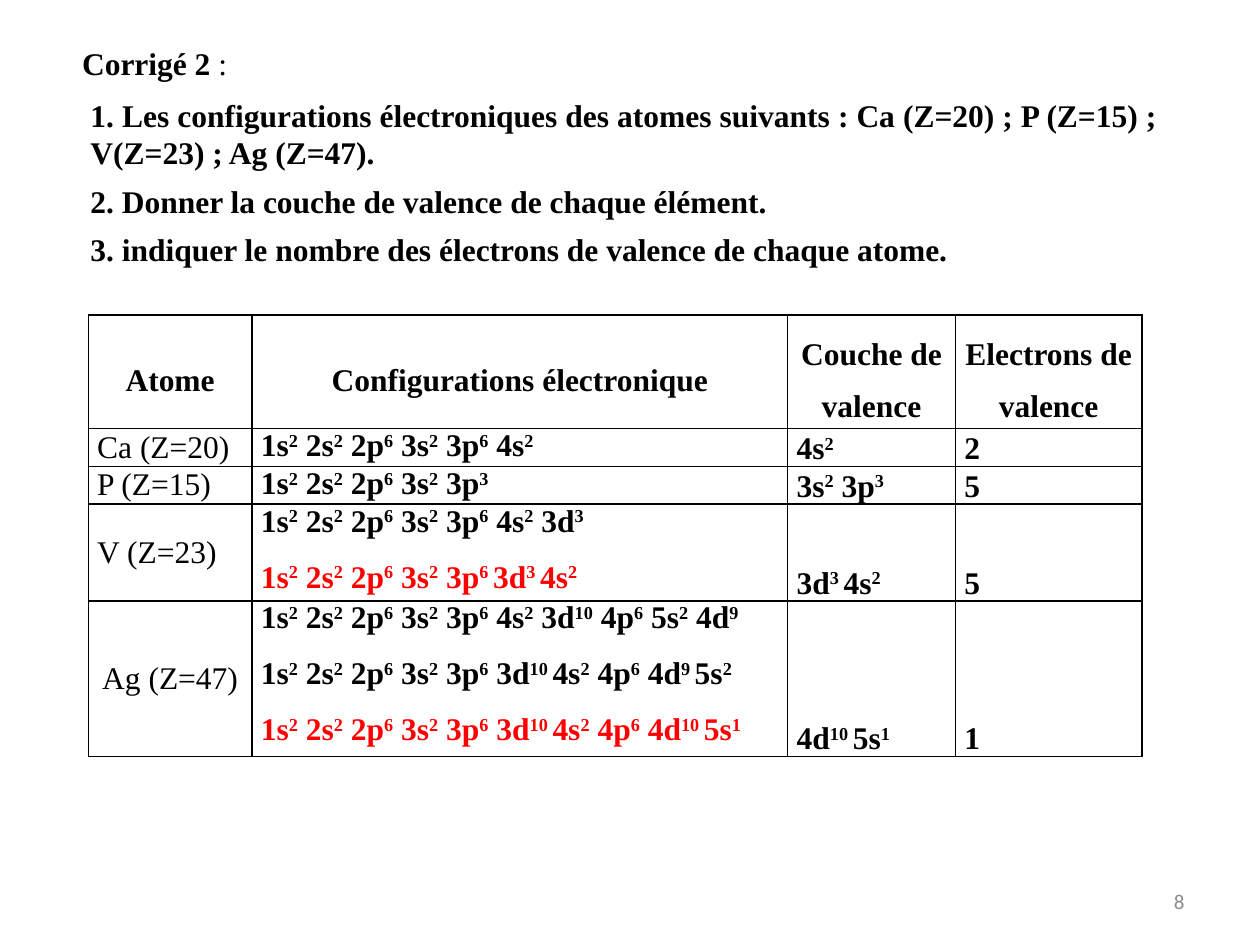
import pptx
import pptx.dml.color
import pptx.enum.text
import pptx.oxml
import pptx.oxml.ns
import pptx.util

Cm, Pt = pptx.util.Cm, pptx.util.Pt
ALIGN = pptx.enum.text.PP_ALIGN
ANCHOR = pptx.enum.text.MSO_ANCHOR
FIT = pptx.enum.text.MSO_AUTO_SIZE

COLORS = {"text": "000000", "answer": "FF0000", "page": "8C8C8C"}
SERIF = {"name": "Times New Roman", "size": Pt(18), "bold": True}
PLAIN = {**SERIF, "bold": False}
NUMBER = {"name": "Calibri", "size": Pt(12)}
CELL = {"alignment": ALIGN.JUSTIFY, "space_before": Pt(6), "space_after": Pt(6)}
HEAD = {**CELL, "alignment": ALIGN.CENTER, "line_spacing": 1.5}

QUESTIONS = [
    "1. Les configurations électroniques des atomes suivants : Ca (Z=20) ; P (Z=15) ; V(Z=23) ; Ag (Z=47).",
    "2. Donner la couche de valence de chaque élément.",
    "3. indiquer le nombre des électrons de valence de chaque atome.",
]
HEADERS = ["Atome", "Configurations électronique", "Couche de valence", "Electrons de valence"]
# In a configuration, "~" is a space set as superscript.
ATOMS = [
    ("Ca (Z=20) ", ALIGN.JUSTIFY, ["1s2 2s2 2p6 3s2 3p6 4s2"], "4s2", "2"),
    ("P (Z=15)", ALIGN.JUSTIFY, ["1s2 2s2 2p6 3s2 3p3"], "3s2 3p3", "5"),
    ("V (Z=23)", ALIGN.LEFT,
     ["1s2 2s2 2p6 3s2 3p6 4s2 3d3", "1s2 2s2 2p6 3s2 3p6~3d3~4s2"], "3d3~4s2", "5"),
    ("Ag (Z=47)", ALIGN.CENTER,
     ["1s2 2s2 2p6 3s2 3p6 4s2 3d10 4p6 5s2 4d9",
      "1s2 2s2 2p6 3s2 3p6 3d10~4s2 4p6 4d9~5s2",
      "1s2 2s2 2p6 3s2 3p6 3d10~4s2 4p6 4d10~5s1"], "4d10~5s1", "1"),
]
COL_WIDTHS = [3.3, 10.8, 3.38, 3.76]
ROW_HEIGHTS = [2.1, 0.71, 0.71, 1.83, 2.97]


def apply(obj, values):
    for name, value in values.items():
        setattr(obj, name, value)


def place(sp, box):
    apply(sp, dict(zip(("left", "top", "width", "height"), map(Cm, box))))


def add_run(p, text, font, color="text", baseline=None):
    r = p.add_run()
    r.text = text
    apply(r.font, font)
    r.font.color.rgb = pptx.dml.color.RGBColor.from_string(COLORS[color])
    if baseline:
        r.font._element.set("baseline", str(baseline))


def add_configuration(p, text, color="text"):
    for i, group in enumerate(text.split(" ")):
        shells = group.split("~")
        for j, shell in enumerate(shells):
            base, count = shell[:2], shell[2:]
            add_run(p, (" " if i and not j else "") + base, SERIF, color)
            if count:
                gap = " " if j < len(shells) - 1 else ""
                add_run(p, count + gap, SERIF, color, 30000)


def paragraphs(tf, count, fmt):
    for i in range(count):
        p = tf.paragraphs[0] if i == 0 else tf.add_paragraph()
        apply(p, fmt)
        yield p


def add_heading(s, box):
    sp = s.shapes.title
    place(sp, box)
    tf = sp.text_frame
    apply(tf, {"word_wrap": False, "auto_size": FIT.NONE, "vertical_anchor": ANCHOR.MIDDLE})
    p = tf.paragraphs[0]
    p.alignment = ALIGN.LEFT
    add_run(p, "Corrigé 2", SERIF)
    add_run(p, " :", PLAIN)


def add_questions(s, box):
    sp = s.placeholders[1]
    place(sp, box)
    tf = sp.text_frame
    apply(tf, {"word_wrap": True, "auto_size": FIT.NONE})
    fmt = {"alignment": ALIGN.JUSTIFY, "space_before": Pt(3), "space_after": Pt(3)}
    for p, text in zip(paragraphs(tf, len(QUESTIONS), fmt), QUESTIONS):
        add_run(p, text, SERIF)
        pPr = p._p.get_or_add_pPr()
        apply_indent = {"marL": "0", "indent": "0"}
        for name, value in apply_indent.items():
            pPr.set(name, value)
        pPr.append(pptx.oxml.parse_xml("<a:buNone %s/>" % pptx.oxml.ns.nsdecls("a")))


def format_cell(cell, anchor):
    apply(cell, {"margin_left": Cm(0.18), "margin_right": Cm(0.18), "margin_top": 0,
                 "margin_bottom": 0, "vertical_anchor": anchor})
    tcPr = cell._tc.get_or_add_tcPr()
    for side in "LRTB":
        tcPr.append(pptx.oxml.parse_xml(
            '<a:ln%s %s w="12700"><a:solidFill><a:srgbClr val="%s"/></a:solidFill></a:ln%s>'
            % (side, pptx.oxml.ns.nsdecls("a"), COLORS["text"], side)))
    cell.fill.background()


def add_atoms(s, left, top):
    table = s.shapes.add_table(len(ROW_HEIGHTS), len(COL_WIDTHS), Cm(left), Cm(top),
                               Cm(sum(COL_WIDTHS)), Cm(sum(ROW_HEIGHTS))).table
    apply(table, {"first_row": False, "horz_banding": False})
    for col, width in zip(table.columns, COL_WIDTHS):
        col.width = Cm(width)
    for row, height in zip(table.rows, ROW_HEIGHTS):
        row.height = Cm(height)
    for c, text in enumerate(HEADERS):
        cell = table.cell(0, c)
        format_cell(cell, ANCHOR.MIDDLE)
        for p in paragraphs(cell.text_frame, 1, HEAD):
            add_run(p, text, SERIF)
    for i, (atom, align, steps, valence, electrons) in enumerate(ATOMS, 1):
        cell = table.cell(i, 0)
        format_cell(cell, ANCHOR.MIDDLE)
        for p in paragraphs(cell.text_frame, 1, {**CELL, "alignment": align}):
            add_run(p, atom, PLAIN)
        for c, lines in enumerate((steps, [valence], [electrons]), 1):
            cell = table.cell(i, c)
            format_cell(cell, ANCHOR.TOP if c == 1 else ANCHOR.BOTTOM)
            for p, line in zip(paragraphs(cell.text_frame, len(lines), CELL), lines):
                final = len(lines) > 1 and line == lines[-1]
                add_configuration(p, line, "answer" if final else "text")


def add_page_number(s, box):
    tf = s.shapes.add_textbox(*map(Cm, box)).text_frame
    apply(tf, {"word_wrap": True, "vertical_anchor": ANCHOR.MIDDLE})
    p = tf.paragraphs[0]
    p.alignment = ALIGN.RIGHT
    add_run(p, "8", NUMBER, "page")


def main():
    prs = pptx.Presentation()
    apply(prs, {"slide_width": Cm(25.4), "slide_height": Cm(19.05)})
    s = prs.slides.add_slide(prs.slide_layouts[1])
    add_page_number(s, (18.21, 17.65, 5.92, 1.02))
    add_atoms(s, 1.78, 6.35)
    add_heading(s, (1.4, 0.76, 3.48, 1.02))
    add_questions(s, (1.57, 1.8, 22.02, 3.76))
    prs.save("out.pptx")


if __name__ == "__main__":
    main()
